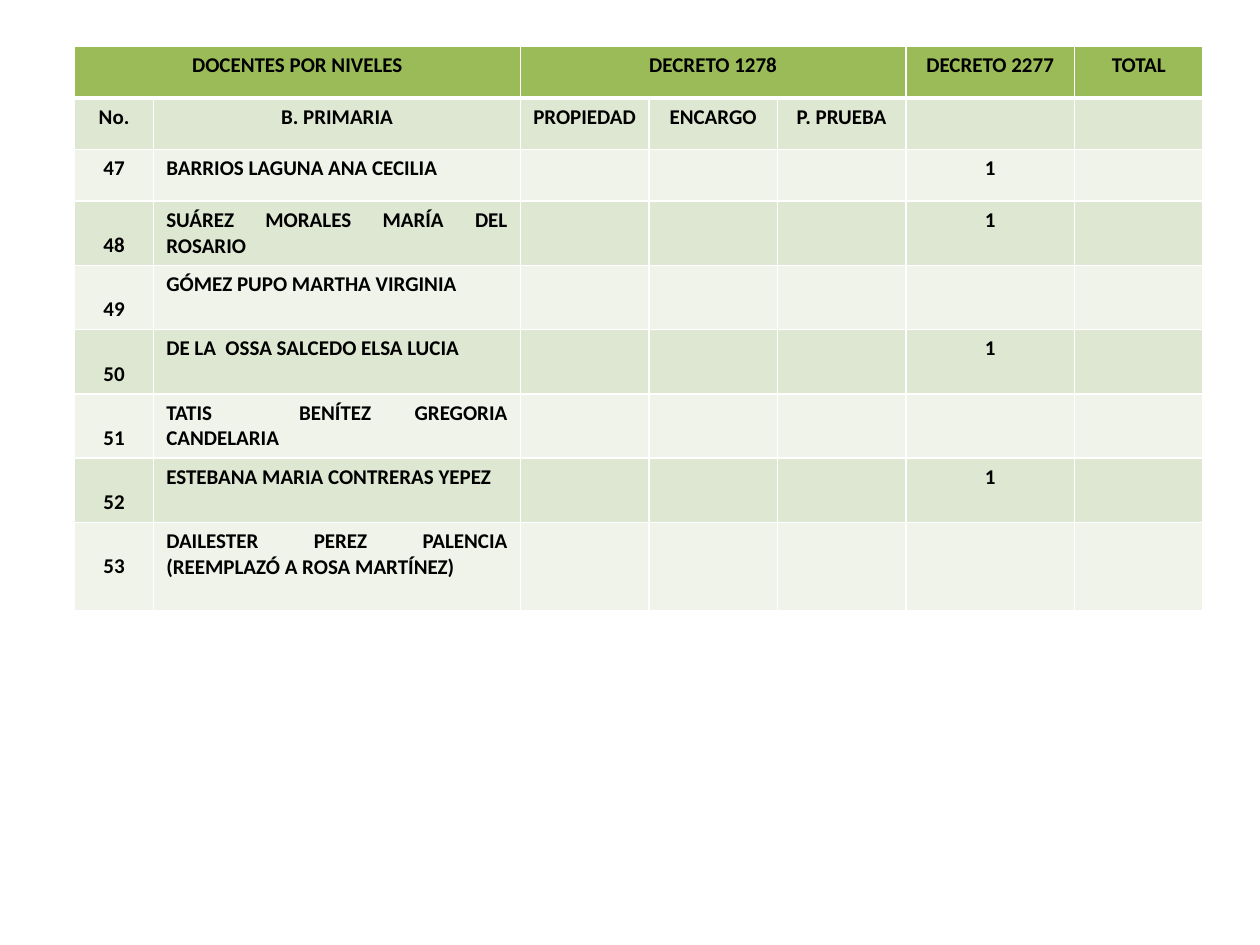
from dataclasses import dataclass

from lxml import etree
from pptx import Presentation
from pptx.dml.color import RGBColor
from pptx.enum.text import PP_ALIGN
from pptx.oxml.ns import qn
from pptx.util import Inches, Pt

CENTER, JUSTIFY = PP_ALIGN.CENTER, PP_ALIGN.JUSTIFY
BLANK_LAYOUT = 6


@dataclass(frozen=True)
class Theme:
    font: str = "Calibri"
    size: float = 12
    text: str = "000000"
    header: str = "9BBB59"
    bands: tuple = ("DEE7D1", "EFF3EA")
    border: str = "FFFFFF"
    thin: float = 1
    thick: float = 3


class Deck:
    def __init__(self, theme, width, height):
        self.theme = theme
        self.prs = Presentation()
        self.prs.slide_width, self.prs.slide_height = Inches(width), Inches(height)
        self.s = self.prs.slides.add_slide(self.prs.slide_layouts[BLANK_LAYOUT])

    def table(self, left, top, cols, rows):
        """Place a table; left and top are shares of the slide's size."""
        x, y = int(self.prs.slide_width * left), int(self.prs.slide_height * top)
        table = self.s.shapes.add_table(len(rows), len(cols), x, y,
                                        Inches(sum(cols)), Inches(sum(rows))).table
        for col, width in zip(table.columns, cols):
            col.width = Inches(width)
        for row, height in zip(table.rows, rows):
            row.height = Inches(height)
        return table

    def cell(self, cell, text, fill, align=CENTER, bottom=None):
        t = self.theme
        cell.fill.solid()
        cell.fill.fore_color.rgb = RGBColor.from_string(fill)
        self.borders(cell, bottom or t.thin)
        p = cell.text_frame.paragraphs[0]
        p.alignment = align
        if text:
            font = p.add_run().font
            p.runs[0].text = text
            font.name, font.size, font.bold = t.font, Pt(t.size), True
            font.color.rgb = RGBColor.from_string(t.text)

    def borders(self, cell, bottom):
        tc_pr = cell._tc.get_or_add_tcPr()
        widths = {"lnL": self.theme.thin, "lnR": self.theme.thin,
                  "lnT": self.theme.thin, "lnB": bottom}
        # Lines must come before the fill
        for i, (side, width) in enumerate(widths.items()):
            ln = etree.Element(qn("a:" + side), w=str(Pt(width)))
            fill = etree.SubElement(ln, qn("a:solidFill"))
            etree.SubElement(fill, qn("a:srgbClr"), val=self.theme.border)
            tc_pr.insert(i, ln)


# Content
HEADER = ["DOCENTES POR NIVELES", "", "DECRETO 1278", "", "", "DECRETO 2277", "TOTAL"]
HEADER_SPANS = [(0, 1), (2, 4)]
SUBHEADER = ["No.", "B. PRIMARIA", "PROPIEDAD", "ENCARGO", "P. PRUEBA", "", ""]
FIRST_NUMBER = 47
TEACHERS = [  # name, count under Decreto 2277
    ("BARRIOS LAGUNA ANA CECILIA", "1"),
    ("SUÁREZ MORALES MARÍA DEL ROSARIO", "1"),
    ("GÓMEZ PUPO MARTHA VIRGINIA", ""),
    ("DE LA  OSSA SALCEDO ELSA LUCIA", "1"),
    ("TATIS  BENÍTEZ GREGORIA CANDELARIA", ""),
    ("ESTEBANA MARIA CONTRERAS YEPEZ", "1"),
    ("DAILESTER PEREZ PALENCIA (REEMPLAZÓ A ROSA MARTÍNEZ)", ""),
]
COLS = [0.63, 2.91, 1.02, 1.02, 1.02, 1.34, 1.02]
ROWS = [0.41] * 3 + [0.51] * 5 + [0.7]
SECOND_LINE = Inches(0.25)


def main():
    theme = Theme()
    deck = Deck(theme, 10, 7.5)
    table = deck.table(0.059, 0.049, COLS, ROWS)

    # Header
    for c, text in enumerate(HEADER):
        deck.cell(table.cell(0, c), text, theme.header, bottom=theme.thick)
    for first, last in HEADER_SPANS:
        table.cell(0, first).merge(table.cell(0, last))

    # Column names and teachers, in alternating bands
    body = [SUBHEADER] + [[str(number), name, "", "", "", count, ""]
                          for number, (name, count) in enumerate(TEACHERS, FIRST_NUMBER)]
    for r, row in enumerate(body, 1):
        for c, text in enumerate(row):
            align = JUSTIFY if c == 1 and r > 1 else CENTER
            deck.cell(table.cell(r, c), text, theme.bands[(r - 1) % 2], align)
        # Numbers of the taller rows sit on the second line
        if r > 2:
            table.cell(r, 0).margin_top = SECOND_LINE

    deck.prs.save("out.pptx")


if __name__ == "__main__":
    main()
